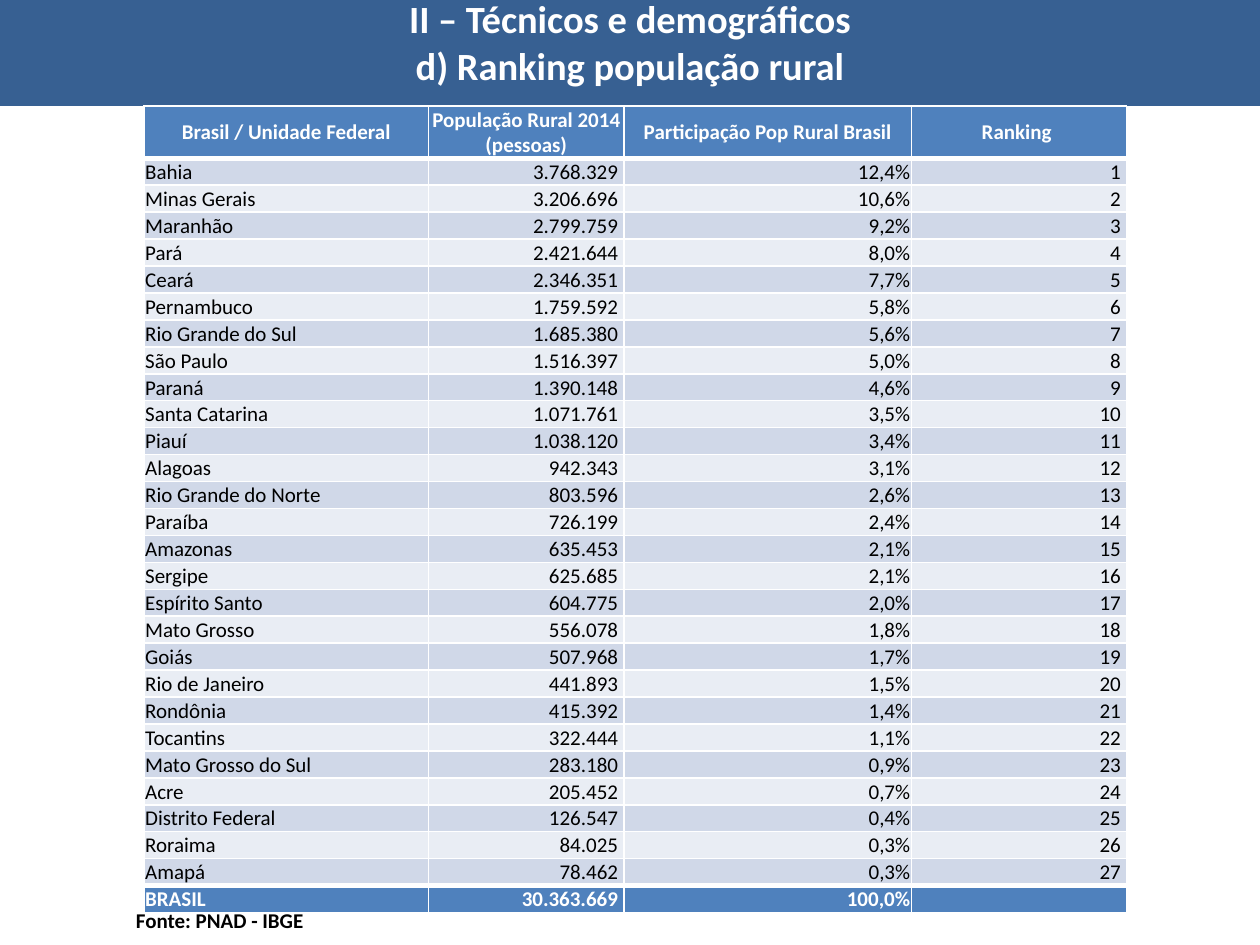
from pptx import Presentation
from pptx.dml.color import RGBColor
from pptx.enum.shapes import MSO_SHAPE as Shape
from pptx.enum.text import MSO_ANCHOR as Anchor, PP_ALIGN as Align
from pptx.oxml import parse_xml
from pptx.oxml.ns import nsdecls
from pptx.util import Pt

# Content
TITLE = ["II – Técnicos e demográficos", "d) Ranking população rural"]
SOURCE = "Fonte: PNAD - IBGE"
HEADERS = ["Brasil / Unidade Federal", "População Rural 2014\n(pessoas)",
           "Participação Pop Rural Brasil", "Ranking"]
STATES = [
    ("Bahia", "3.768.329", "12,4%"),
    ("Minas Gerais", "3.206.696", "10,6%"),
    ("Maranhão", "2.799.759", "9,2%"),
    ("Pará", "2.421.644", "8,0%"),
    ("Ceará", "2.346.351", "7,7%"),
    ("Pernambuco", "1.759.592", "5,8%"),
    ("Rio Grande do Sul", "1.685.380", "5,6%"),
    ("São Paulo", "1.516.397", "5,0%"),
    ("Paraná", "1.390.148", "4,6%"),
    ("Santa Catarina", "1.071.761", "3,5%"),
    ("Piauí", "1.038.120", "3,4%"),
    ("Alagoas", "942.343", "3,1%"),
    ("Rio Grande do Norte", "803.596", "2,6%"),
    ("Paraíba", "726.199", "2,4%"),
    ("Amazonas", "635.453", "2,1%"),
    ("Sergipe", "625.685", "2,1%"),
    ("Espírito Santo", "604.775", "2,0%"),
    ("Mato Grosso", "556.078", "1,8%"),
    ("Goiás", "507.968", "1,7%"),
    ("Rio de Janeiro", "441.893", "1,5%"),
    ("Rondônia", "415.392", "1,4%"),
    ("Tocantins", "322.444", "1,1%"),
    ("Mato Grosso do Sul", "283.180", "0,9%"),
    ("Acre", "205.452", "0,7%"),
    ("Distrito Federal", "126.547", "0,4%"),
    ("Roraima", "84.025", "0,3%"),
    ("Amapá", "78.462", "0,3%"),
]
TOTAL = ("BRASIL", "30.363.669", "100,0%", "")

# Layout and colours
FONT = "Calibri"
WHITE, BLACK, NAVY, BLUE = "FFFFFF", "000000", "376092", "4F81BD"
BANDS = ["D0D8E8", "E9EDF4"]
TABLE_LEFT, TABLE_TOP = 82.3, 60.5
COLUMN_WIDTHS = [162.7, 111.6, 164.2, 123.1]
HEADER_HEIGHT, ROW_HEIGHT = 29.8, 15.4
INSET, NUMBER_INSET = 0.7, 3.4


def color(hex_value):
    return RGBColor.from_string(hex_value)


def add_run(paragraph, text, size, hex_value, bold=True):
    run = paragraph.add_run()
    run.text = text
    run.font.name, run.font.size, run.font.bold = FONT, Pt(size), bold
    run.font.color.rgb = color(hex_value)


def set_borders(cell, top, bottom):
    properties = cell._tc.get_or_add_tcPr()
    sides = [("lnL", 1), ("lnR", 1), ("lnT", top), ("lnB", bottom)]
    for index, (side, width) in enumerate(sides):
        properties.insert(index, parse_xml(
            f'<a:{side} {nsdecls("a")} w="{Pt(width)}"><a:solidFill>'
            f'<a:srgbClr val="{WHITE}"/></a:solidFill></a:{side}>'))


def fill_cell(cell, text, align, fill, text_color, bold, right_inset):
    cell.fill.solid()
    cell.fill.fore_color.rgb = color(fill)
    cell.vertical_anchor = Anchor.MIDDLE
    cell.margin_left = cell.margin_top = Pt(INSET)
    cell.margin_right, cell.margin_bottom = Pt(right_inset), Pt(0)
    for index, line in enumerate(text.split("\n")):
        frame = cell.text_frame
        paragraph = frame.add_paragraph() if index else frame.paragraphs[0]
        paragraph.alignment = align
        if line:
            add_run(paragraph, line, 12, text_color, bold)
        else:  # an empty cell must not make its row taller
            paragraph._p.get_or_add_endParaRPr().set("sz", "1200")


presentation = Presentation()
presentation.slide_width, presentation.slide_height = Pt(720), Pt(540)
slide = presentation.slides.add_slide(presentation.slide_layouts[6])

# Title band
band = slide.shapes.add_shape(Shape.RECTANGLE, Pt(0), Pt(-13), Pt(720), Pt(73.5))
band.shadow.inherit = False
band.fill.solid()
band.fill.fore_color.rgb = color(NAVY)
band.line.fill.background()
band.text_frame.word_wrap = True
band.text_frame.vertical_anchor = Anchor.MIDDLE
heading = band.text_frame.paragraphs[0]
heading.alignment = Align.CENTER
for index, line in enumerate(TITLE):
    if index:
        heading.add_line_break()
    add_run(heading, line, 22, WHITE)

# Ranking table
ranked = [(*state, str(rank)) for rank, state in enumerate(STATES, 1)]
rows = [HEADERS, *ranked, TOTAL]
last = len(rows) - 1
table = slide.shapes.add_table(
    len(rows), len(HEADERS), Pt(TABLE_LEFT), Pt(TABLE_TOP),
    Pt(sum(COLUMN_WIDTHS)), Pt(HEADER_HEIGHT + last * ROW_HEIGHT)).table
for column, width in zip(table.columns, COLUMN_WIDTHS):
    column.width = Pt(width)
for r, row in enumerate(rows):
    table.rows[r].height = Pt(ROW_HEIGHT if r else HEADER_HEIGHT)
    strong = r in (0, last)
    fill = BLUE if strong else BANDS[(r - 1) % 2]
    for c, text in enumerate(row):
        align = Align.CENTER if r == 0 else Align.RIGHT if c else Align.LEFT
        padded = c == 3 or (c == 1 and r > 0)
        cell = table.cell(r, c)
        fill_cell(cell, text, align, fill, WHITE if strong else BLACK, strong,
                  NUMBER_INSET if padded else INSET)
        set_borders(cell, 3 if r in (1, last) else 1,
                    3 if r in (0, last - 1) else 1)

# Source line
source = slide.shapes.add_textbox(Pt(70.6), Pt(514.8), Pt(429.8), Pt(21.8))
source.text_frame.word_wrap = True
add_run(source.text_frame.paragraphs[0], SOURCE, 12, BLACK)

presentation.save("out.pptx")
